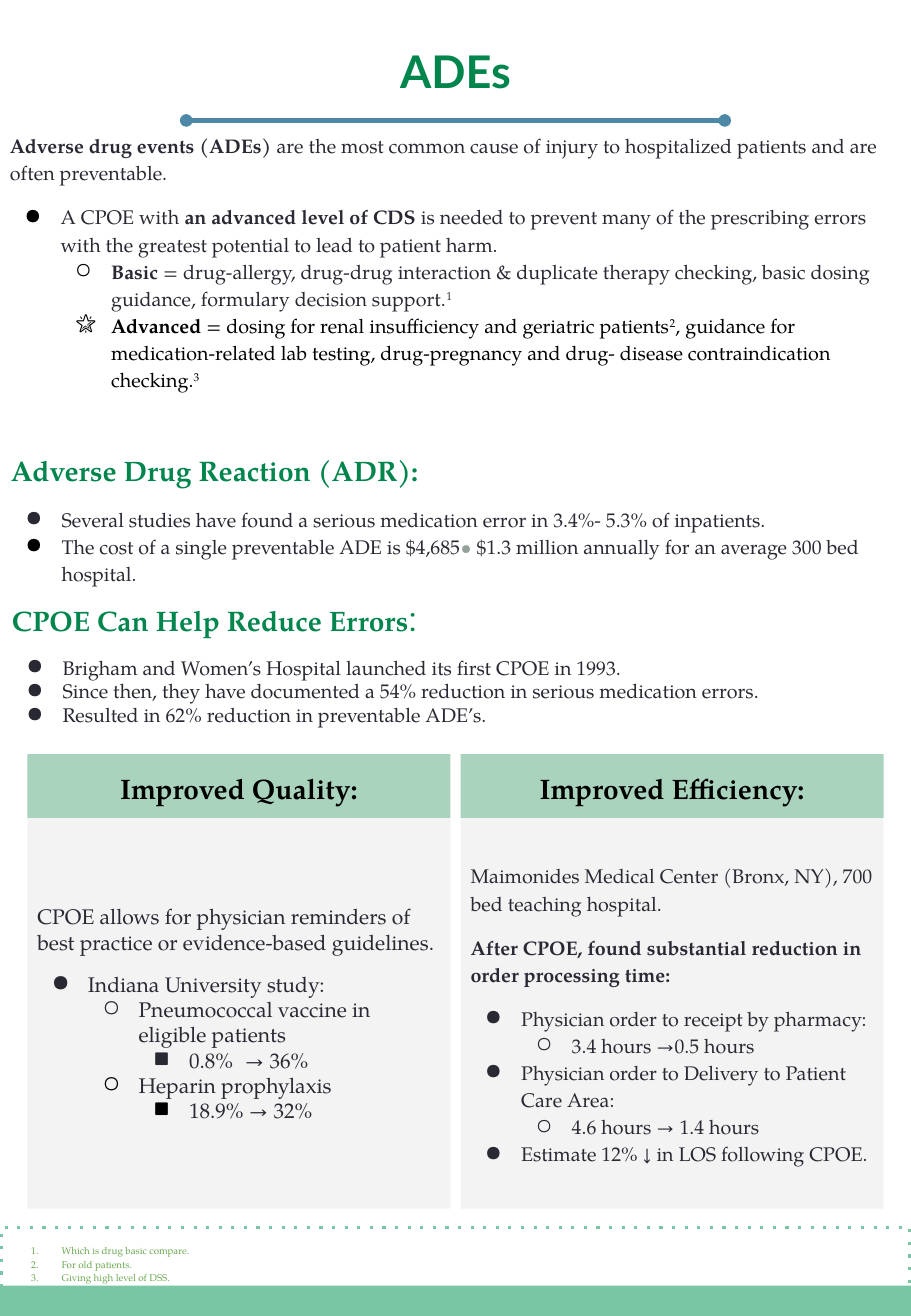
from dataclasses import dataclass

from lxml import etree
from pptx import Presentation
from pptx.dml.color import RGBColor
from pptx.enum.dml import MSO_LINE
from pptx.enum.shapes import MSO_CONNECTOR, MSO_SHAPE
from pptx.enum.text import MSO_ANCHOR, MSO_AUTO_SIZE, PP_ALIGN
from pptx.oxml.ns import qn
from pptx.util import Inches, Pt

RECTANGLE = MSO_SHAPE.RECTANGLE
STRAIGHT = MSO_CONNECTOR.STRAIGHT
DOTTED = MSO_LINE.ROUND_DOT
TOP, MIDDLE = MSO_ANCHOR.TOP, MSO_ANCHOR.MIDDLE
LEFT, CENTER = PP_ALIGN.LEFT, PP_ALIGN.CENTER
FIXED_SIZE = MSO_AUTO_SIZE.NONE

BLACK = RGBColor(0x00, 0x00, 0x00)
INK = RGBColor(0x29, 0x29, 0x34)
GREEN = RGBColor(0x00, 0x85, 0x4C)
MINT = RGBColor(0x79, 0xC6, 0xA5)
PALE_MINT = RGBColor(0xAA, 0xD3, 0xBD)
PANEL_GRAY = RGBColor(0xF3, 0xF3, 0xF3)
BLUE = RGBColor(0x4D, 0x88, 0xA6)
SAGE = RGBColor(0x93, 0xA2, 0x99)
LIME = RGBColor(0x6A, 0xA8, 0x4F)

BODY_FONT = "TeX Gyre Pagella"
NUMBERED = "arabicPeriod"


@dataclass
class Span:
    text: str
    bold: bool = False
    color: RGBColor = INK
    size: float = 14
    font: str = BODY_FONT
    raised: bool = False


@dataclass
class Para:
    spans: list
    bullet: str = ""
    level: int = 0
    before: float = 0
    spacing: float = 1.15
    bullet_color: RGBColor = INK
    hanging: float = 0.35
    align: PP_ALIGN = LEFT


def add_bullet(paragraph, para):
    properties = paragraph._p.get_or_add_pPr()
    properties.set("marL", str(Inches(0.5 * (para.level + 1))))
    properties.set("indent", str(-Inches(para.hanging)))
    color = etree.SubElement(properties, qn("a:buClr"))
    etree.SubElement(color, qn("a:srgbClr"), val=str(para.bullet_color))
    etree.SubElement(properties, qn("a:buFont"), typeface=BODY_FONT)
    if para.bullet == NUMBERED:
        etree.SubElement(properties, qn("a:buAutoNum"), type=NUMBERED)
    else:
        etree.SubElement(properties, qn("a:buChar"), char=para.bullet)


def fill_text(frame, paras, anchor=TOP, inset_x=0.1, inset_y=0.1):
    frame.word_wrap = True
    frame.auto_size = FIXED_SIZE
    frame.vertical_anchor = anchor
    frame.margin_left = frame.margin_right = Inches(inset_x)
    frame.margin_top = frame.margin_bottom = Inches(inset_y)
    for index, para in enumerate(paras):
        paragraph = frame.add_paragraph() if index else frame.paragraphs[0]
        paragraph.alignment = para.align
        paragraph.level = para.level
        paragraph.line_spacing = para.spacing
        paragraph.space_before = Pt(para.before)
        if para.bullet:
            add_bullet(paragraph, para)
        for span in para.spans:
            run = paragraph.add_run()
            run.text = span.text
            run.font.name = span.font
            run.font.size = Pt(span.size)
            run.font.bold = span.bold
            run.font.color.rgb = span.color
            if span.raised:
                run._r.get_or_add_rPr().set("baseline", "30000")


def add_text(page, box, paras):
    shape = page.shapes.add_textbox(*map(Inches, box))
    fill_text(shape.text_frame, paras)


def add_rectangle(page, box, fill=None):
    shape = page.shapes.add_shape(RECTANGLE, *map(Inches, box))
    shape.shadow.inherit = False
    shape.line.fill.background()
    if fill is None:
        shape.fill.background()
    else:
        shape.fill.solid()
        shape.fill.fore_color.rgb = fill
    return shape


def add_title(page, box):
    left, top, width, height = box
    title = page.shapes.title
    title.left, title.top, title.width, title.height = map(Inches, box)
    span = Span("ADEs", True, GREEN, 32, "Lato")
    fill_text(title.text_frame, [Para([span], spacing=0.9, align=CENTER)])
    rule_y = Inches(top + height)
    rule = page.shapes.add_connector(
        STRAIGHT, Inches(left), rule_y, Inches(left + width), rule_y)
    rule.line.color.rgb = BLUE
    rule.line.width = Pt(3)
    properties = rule._element.spPr
    outline = properties.find(qn("a:ln"))
    for end in ("a:headEnd", "a:tailEnd"):
        etree.SubElement(outline, qn(end), type="oval")
    etree.SubElement(properties, qn("a:effectLst"))


def add_introduction(page, box):
    add_text(page, box, [
        Para([Span("Adverse drug events (ADEs) ", True),
              Span("are the most common cause of injury to hospitalized "
                   "patients and are often preventable.")]),
        Para([Span("A CPOE with "), Span("an advanced level of CDS", True),
              Span(" is needed to prevent many of the prescribing errors with "
                   "the greatest potential to lead to patient harm.")],
             "●", before=12, bullet_color=BLACK),
        Para([Span("Basic ", True),
              Span("= drug-allergy, drug-drug interaction & duplicate therapy "
                   "checking, basic dosing guidance, formulary decision support."),
              Span("1", raised=True)], "○", 1, bullet_color=BLACK),
        Para([Span("Advanced ", True, BLACK),
              Span("= dosing for renal insufficiency and geriatric patients",
                   color=BLACK),
              Span("2", color=BLACK, raised=True),
              Span(", guidance for medication-related lab testing, drug-pregnancy "
                   "and drug- disease contraindication checking.", color=BLACK),
              Span("3", color=BLACK, raised=True)],
             "🌟", 1, bullet_color=BLACK)])


def add_reactions(page, box):
    add_text(page, box, [
        Para([Span("Adverse Drug Reaction (ADR):", True, GREEN, 20)], spacing=1),
        Para([Span("Several studies have found a serious medication error in "
                   "3.4%- 5.3% of inpatients.")], "●", before=12),
        Para([Span("The cost of a single preventable ADE is $4,685"),
              Span("• ", color=SAGE),
              Span("$1.3 million annually for an average 300 bed hospital.")],
             "●", bullet_color=BLACK)])


def add_error_reduction(page, box):
    facts = ["Brigham and Women’s Hospital launched its first CPOE in 1993.",
             "Since then, they have documented a 54% reduction in serious "
             "medication errors.",
             "Resulted in 62% reduction in preventable ADE’s."]
    heading = Para([Span("CPOE Can Help Reduce Errors", True, GREEN, 20),
                    Span(":", False, GREEN, 24, "Roboto")], spacing=1)
    add_text(page, box, [heading] + [
        Para([Span(fact)], "●", before=0 if index else 12, spacing=1)
        for index, fact in enumerate(facts)])


def add_panel(page, box, heading, paras):
    left, top, width, height = box
    header_height = 0.63
    body = add_rectangle(
        page, (left, top + header_height, width, height - header_height), PANEL_GRAY)
    fill_text(body.text_frame, paras, MIDDLE)
    header = add_rectangle(page, (left, top, width, header_height), PALE_MINT)
    title = Para([Span(heading, True, BLACK, 20)], align=CENTER)
    fill_text(header.text_frame, [title], MIDDLE, 0.11, 0.06)


def quality_paras():
    rows = [("CPOE allows for physician reminders of best practice or "
             "evidence-based guidelines.", "", 0, 0, INK),
            ("Indiana University study:", "●", 0, 12, INK),
            ("Pneumococcal vaccine in eligible patients", "○", 1, 0, INK),
            ("0.8%\t → 36%", "■", 2, 0, INK),
            ("Heparin prophylaxis", "○", 1, 0, BLACK),
            ("18.9% → 32%", "■", 2, 0, BLACK)]
    return [Para([Span(text, size=15)], bullet, level, before, 1, color)
            for text, bullet, level, before, color in rows]


def efficiency_paras():
    rows = [("Maimonides Medical Center (Bronx, NY), 700 bed teaching hospital.",
             False, "", 0, 0),
            ("After CPOE, found substantial reduction in order processing time:",
             True, "", 0, 12),
            ("Physician order to receipt by pharmacy:", False, "●", 0, 12),
            ("3.4 hours →0.5 hours", False, "○", 1, 0),
            ("Physician order to Delivery to Patient Care Area:", False, "●", 0, 0),
            ("4.6 hours → 1.4 hours", False, "○", 1, 0),
            ("Estimate 12% ↓ in LOS following CPOE.", False, "●", 0, 0)]
    return [Para([Span(text, bold)], bullet, level, before)
            for text, bold, bullet, level, before in rows]


def add_references(page, box):
    frame = add_rectangle(page, box)
    frame.line.color.rgb = MINT
    frame.line.width = Pt(2.25)
    frame.line.dash_style = DOTTED
    frame._element.spPr.find(".//" + qn("a:prstDash")).set("val", "dot")
    notes = ["Which is drug basic compare.", "For old patients.",
             "Giving high level of DSS."]
    fill_text(frame.text_frame, [
        Para([Span(note, color=LIME, size=7)], NUMBERED,
             bullet_color=LIME, hanging=0.3) for note in notes], MIDDLE)


def main():
    deck = Presentation()
    deck.slide_width, deck.slide_height = Inches(9), Inches(13)
    page = deck.slides.add_slide(deck.slide_layouts[5])
    add_rectangle(page, (0, 12.7, 9, 0.3), MINT)
    add_title(page, (1.84, 0.39, 5.32, 0.8))
    add_introduction(page, (0, 1.19, 9, 3))
    add_reactions(page, (0.01, 4.38, 8.98, 1.63))
    add_error_reduction(page, (0.02, 5.81, 8.9, 1.46))
    add_panel(page, (0.27, 7.45, 4.18, 4.49), "Improved Quality:", quality_paras())
    add_panel(page, (4.55, 7.45, 4.18, 4.49), "Improved Efficiency:",
              efficiency_paras())
    add_references(page, (0.01, 12.13, 8.98, 0.7))
    deck.save("out.pptx")


if __name__ == "__main__":
    main()
